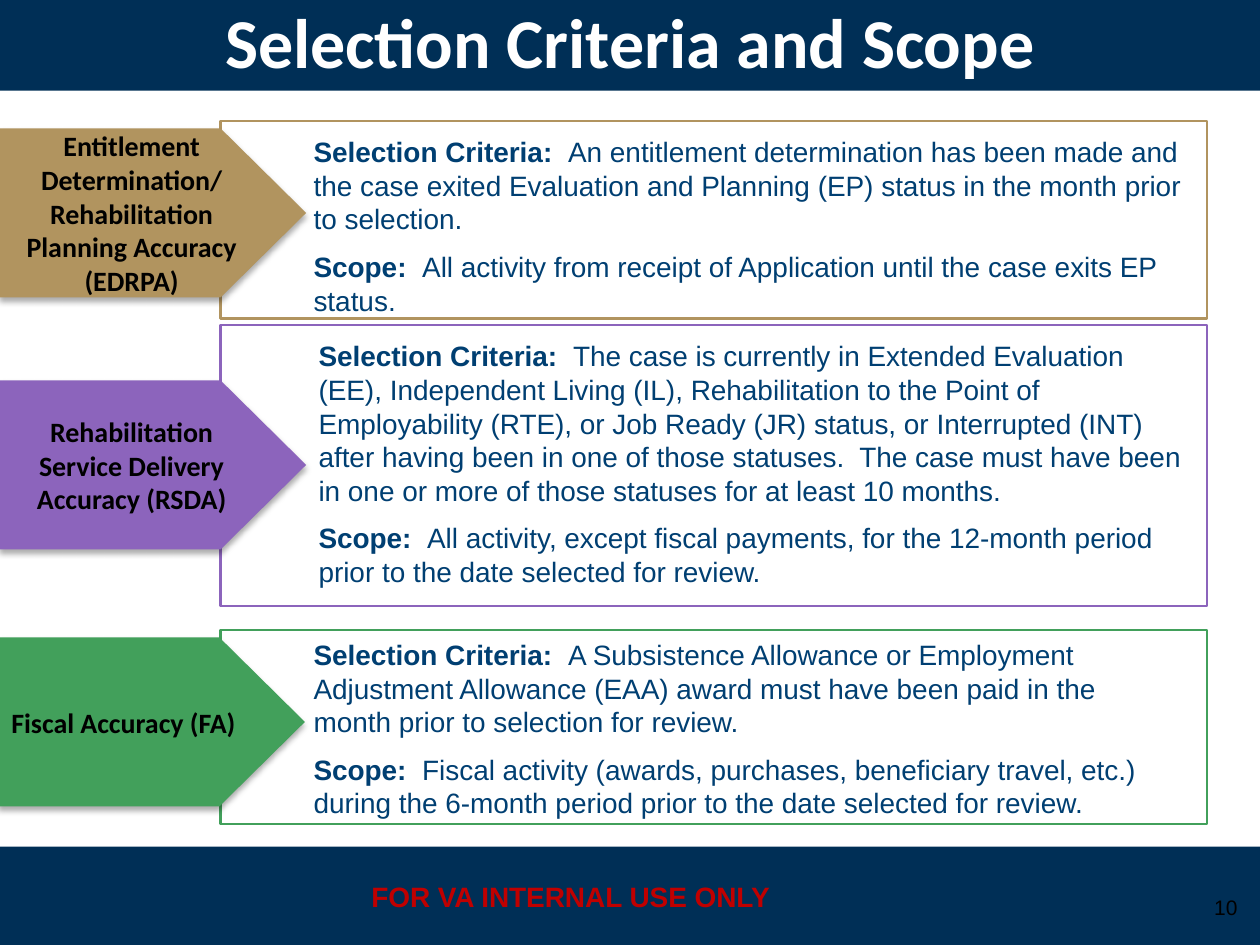
from lxml import etree
from pptx import Presentation
from pptx.dml.color import RGBColor
from pptx.enum.shapes import MSO_SHAPE
from pptx.enum.text import MSO_ANCHOR, MSO_AUTO_SIZE, PP_ALIGN
from pptx.oxml import parse_xml
from pptx.oxml.ns import nsdecls, qn
from pptx.util import Inches, Pt

RECTANGLE = MSO_SHAPE.RECTANGLE
PENTAGON = MSO_SHAPE.PENTAGON
MIDDLE = MSO_ANCHOR.MIDDLE
TOP = MSO_ANCHOR.TOP
FIT_SHAPE = MSO_AUTO_SIZE.SHAPE_TO_FIT_TEXT
NO_FIT = MSO_AUTO_SIZE.NONE
LEFT = PP_ALIGN.LEFT
CENTER = PP_ALIGN.CENTER
RIGHT = PP_ALIGN.RIGHT

NAVY = RGBColor(0x00, 0x2F, 0x56)
BODY_BLUE = RGBColor(0x00, 0x3F, 0x72)
RED = RGBColor(0xC0, 0x00, 0x00)
WHITE = RGBColor(0xFF, 0xFF, 0xFF)
BLACK = RGBColor(0x00, 0x00, 0x00)
GOLD = RGBColor(0xB1, 0x94, 0x5F)
PURPLE = RGBColor(0x8C, 0x64, 0xBC)
GREEN = RGBColor(0x42, 0xA0, 0x5B)

REVIEWS = [
    {
        "color": GOLD,
        "label": "Entitlement Determination/ Rehabilitation Planning Accuracy (EDRPA)",
        "frame": (0.96, 1.57),
        "body": (2.39, 1.02, 7.15, 1.31),
        "arrow": (0, 1.02),
        "criteria": "An entitlement determination has been made and the case exited "
        "Evaluation and Planning (EP) status in the month prior to selection.",
        "scope": "All activity from receipt of Application until the case exits EP status.",
    },
    {
        "color": PURPLE,
        "label": "Rehabilitation Service Delivery Accuracy (RSDA)",
        "frame": (2.58, 2.23),
        "body": (2.43, 2.64, 7.07, 2.12),
        "arrow": (0, 3.02),
        "criteria": "The case is currently in Extended Evaluation (EE), Independent Living (IL), "
        "Rehabilitation to the Point of Employability (RTE), or Job Ready (JR) status, or "
        "Interrupted (INT) after having been in one of those statuses.  The case must have "
        "been in one or more of those statuses for at least 10 months.",
        "scope": "All activity, except fiscal payments, for the 12-month period prior to the "
        "date selected for review.",
    },
    {
        "color": GREEN,
        "label": "Fiscal Accuracy (FA)",
        "frame": (5, 1.54),
        "body": (2.39, 5.01, 7.07, 1.58),
        "arrow": (-0.01, 5.06),
        "insets": (0.06, 0.17),
        "criteria": "A Subsistence Allowance or Employment Adjustment Allowance (EAA) award "
        "must have been paid in the month prior to selection for review.",
        "scope": "Fiscal activity (awards, purchases, beneficiary travel, etc.) during the "
        "6-month period prior to the date selected for review.",
    },
]


def write_text(shape, paragraphs, size=16, font="Arial", color=BLACK, align=LEFT,
               anchor=TOP, fit=NO_FIT, gap=0, insets=(0.1, 0.1)):
    frame = shape.text_frame
    frame.word_wrap = True
    frame.auto_size = fit
    frame.vertical_anchor = anchor
    frame.margin_left, frame.margin_right = map(Inches, insets)
    frame.margin_top = frame.margin_bottom = Inches(0.05)
    for index, runs in enumerate(paragraphs):
        paragraph = frame.add_paragraph() if index else frame.paragraphs[0]
        paragraph.alignment = align
        if index:
            paragraph.space_before = Pt(gap)
        for text, bold in runs:
            run = paragraph.add_run()
            run.text = text
            run.font.size = Pt(size)
            run.font.name = font
            run.font.bold = bold
            run.font.color.rgb = color


def add_box(slide, box, kind=RECTANGLE, fill=None, line=None):
    shape = slide.shapes.add_shape(kind, *map(Inches, box))
    shape.shadow.inherit = False
    if fill is None:
        shape.fill.background()
    else:
        shape.fill.solid()
        shape.fill.fore_color.rgb = fill
    if line is None:
        shape.line.fill.background()
    else:
        shape.line.color.rgb = line
        shape.line.width = Pt(1.5)
    return shape


def add_text(slide, box, paragraphs, **text_format):
    textbox = slide.shapes.add_textbox(*map(Inches, box))
    write_text(textbox, paragraphs, **text_format)


def add_shadow(shape):
    effects = shape.element.spPr.find(qn("a:effectLst"))
    effects.append(parse_xml(
        f'<a:outerShdw {nsdecls("a")} blurRad="{Pt(3.5)}" dist="{Pt(2.2)}" '
        'dir="5400000" rotWithShape="0"/>'))
    color = etree.SubElement(effects[0], qn("a:srgbClr"), val="000000")
    etree.SubElement(color, qn("a:alpha"), val="32000")


def add_arrow(slide, review):
    arrow = add_box(slide, (*review["arrow"], 2.43, 1.34), PENTAGON, fill=review["color"])
    arrow.adjustments[0] = 0.506
    add_shadow(arrow)
    write_text(arrow, [[(review["label"], True)]], font="Calibri", align=CENTER,
               anchor=MIDDLE, insets=review.get("insets", (0.1, 0.1)))


def add_title(slide, text):
    bar = (0, -0.08, 10, 0.8)
    add_box(slide, bar, fill=NAVY)
    title = slide.shapes.title
    title.left, title.top, title.width, title.height = map(Inches, bar)
    write_text(title, [[(text, True)]], size=40, font="Calibri", color=WHITE,
               align=CENTER, anchor=MIDDLE)
    title.element.getparent().append(title.element)


def main():
    presentation = Presentation()
    presentation.slide_width = Inches(10)
    presentation.slide_height = Inches(7.5)
    slide = presentation.slides.add_slide(presentation.slide_layouts[5])

    add_box(slide, (0, 6.72, 10, 0.8), fill=NAVY)
    add_text(slide, (2.56, 6.93, 3.94, 0.37), [[("FOR VA INTERNAL USE ONLY", True)]],
             color=RED, align=CENTER, fit=FIT_SHAPE)
    add_title(slide, "Selection Criteria and Scope")
    add_text(slide, (9.5, 7, 0.42, 0.4), [[("10", False)]], size=12, align=RIGHT,
             anchor=MIDDLE)

    for review in REVIEWS:
        top, height = review["frame"]
        add_box(slide, (1.75, top, 7.83, height), line=review["color"])
    for review in REVIEWS:
        paragraphs = [
            [("Selection Criteria:  ", True), (review["criteria"], False)],
            [("Scope:  ", True), (review["scope"], False)],
        ]
        add_text(slide, review["body"], paragraphs, color=BODY_BLUE, fit=FIT_SHAPE, gap=8)
    for review in REVIEWS:
        add_arrow(slide, review)

    presentation.save("out.pptx")


if __name__ == "__main__":
    main()
